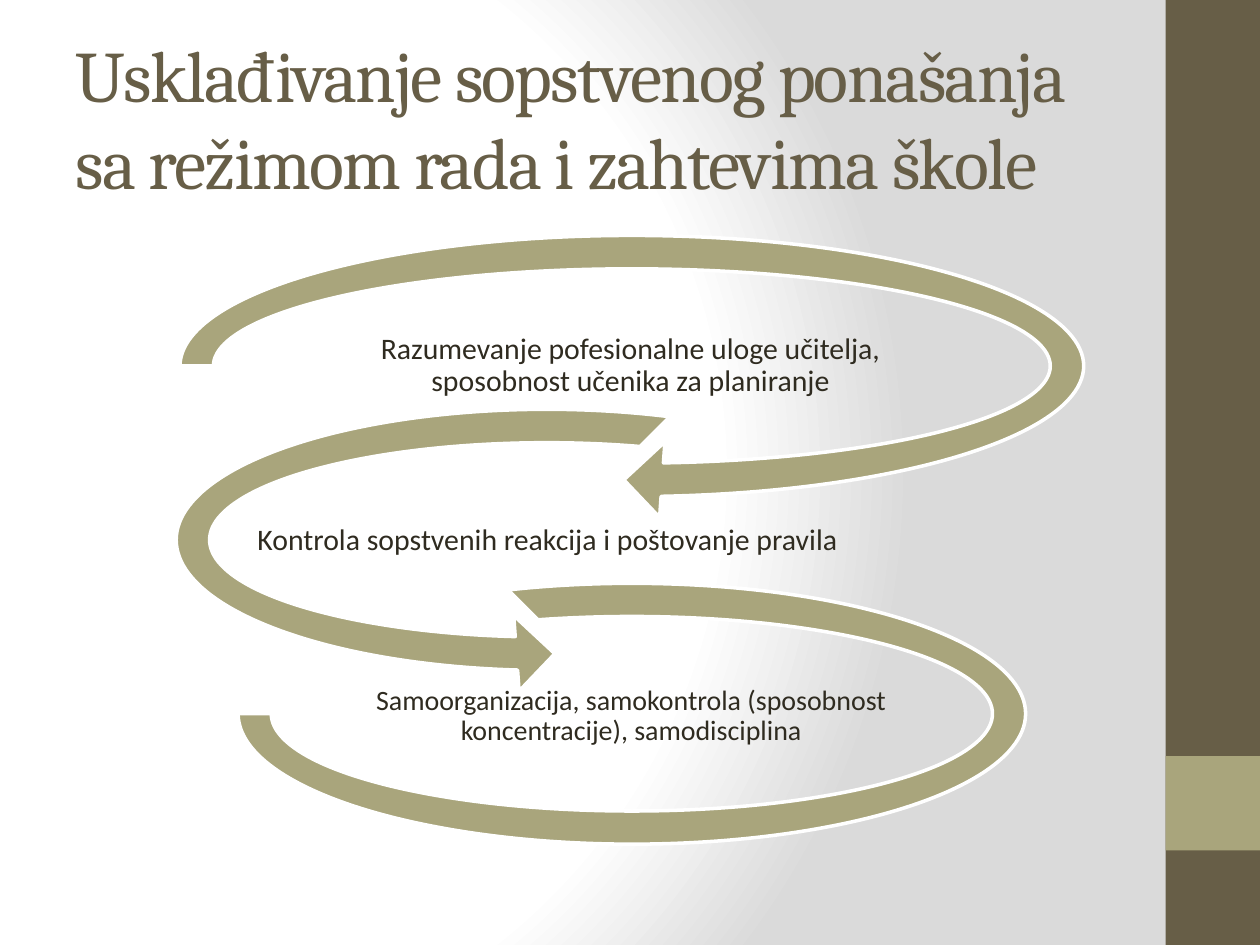
from pptx import Presentation
from pptx.dml.color import RGBColor
from pptx.enum.shapes import MSO_SHAPE
from pptx.enum.text import MSO_ANCHOR, MSO_AUTO_SIZE, PP_ALIGN
from pptx.oxml import parse_xml
from pptx.util import Inches, Pt

W, H = 10, 7.5
COLORS = {"brown": "675E47", "olive": "A9A57C", "ink": "2F2B20",
          "white": "FFFFFF", "gray": "DADADA"}
TITLE = "Usklađivanje sopstvenog ponašanja sa režimom rada i zahtevima škole"
# preset, box, adjustments, text, text box, text size
LOOPS = [
    (MSO_SHAPE.CIRCULAR_ARROW, (1.26, 1.7, 7.51, 2.41),
     (0.11, 11.42, 45, 108, 0.125),
     "Razumevanje pofesionalne uloge učitelja, sposobnost učenika za planiranje",
     (2.46, 2.57, 5.09, 0.67), 17),
    (MSO_SHAPE.LEFT_CIRCULAR_ARROW, (1.23, 3.08, 6.22, 2.41),
     (0.11, 11.42, 63, 189, 0.125),
     "Kontrola sopstvenih reakcija i poštovanje pravila",
     (1.54, 3.96, 5.61, 0.67), 17),
    (MSO_SHAPE.BLOCK_ARC, (1.89, 4.63, 6.25, 2.07),
     (135, 108, 0.127),
     "Samoorganizacija, samokontrola (sposobnost koncentracije), samodisciplina",
     (2.58, 5.35, 4.86, 0.67), 16),
]


def rgb(name):
    return RGBColor.from_string(COLORS[name])


def inches(box):
    return [Inches(v) for v in box]


def add_filled(s, preset, box, color, adjustments=(), line=None):
    sp = s.shapes.add_shape(preset, *inches(box))
    sp.shadow.inherit = False
    sp.fill.solid()
    sp.fill.fore_color.rgb = rgb(color)
    for i, value in enumerate(adjustments):
        sp.adjustments[i] = value
    if line:
        sp.line.color.rgb = rgb(line)
        sp.line.width = Pt(2)
    else:
        sp.line.fill.background()


def write(sp, text, *, font, size, color, align, spacing=1.0, inset=None,
          tracking=None):
    tf = sp.text_frame
    tf.word_wrap = True
    tf.auto_size = MSO_AUTO_SIZE.NONE
    tf.vertical_anchor = MSO_ANCHOR.MIDDLE
    if inset is not None:
        tf.margin_left = tf.margin_right = Inches(inset)
        tf.margin_top = tf.margin_bottom = Inches(inset)
    p = tf.paragraphs[0]
    p.alignment = align
    p.line_spacing = spacing
    r = p.add_run()
    r.text = text
    r.font.name = font
    r.font.size = Pt(size)
    r.font.color.rgb = rgb(color)
    if tracking is not None:
        r.font._element.set("spc", str(int(tracking * 100)))


def set_background(s):
    """Radial gradient, white on the left and gray on the right."""
    s.background.fill.gradient()
    grad = next(s.element.iter("{*}gradFill"))
    stops = "".join(
        f'<a:gs pos="{pos * 1000}"><a:srgbClr val="{COLORS[c]}"/></a:gs>'
        for pos, c in ((0, "white"), (75, "white"), (100, "gray")))
    grad.getparent().replace(grad, parse_xml(
        '<a:gradFill xmlns:a="http://schemas.openxmlformats.org/drawingml/2006/main"'
        f' rotWithShape="1"><a:gsLst>{stops}</a:gsLst><a:path path="circle">'
        '<a:fillToRect l="20000" t="50000" r="100000" b="50000"/></a:path></a:gradFill>'))


def main():
    prs = Presentation()
    prs.slide_width, prs.slide_height = Inches(W), Inches(H)
    s = prs.slides.add_slide(prs.slide_layouts[5])
    set_background(s)

    band = 0.75
    add_filled(s, MSO_SHAPE.RECTANGLE, (W - band, 0, band, H), "brown")
    add_filled(s, MSO_SHAPE.RECTANGLE, (W - band, H * 0.8, band, band), "olive")

    title = s.shapes.title
    title.left, title.top, title.width, title.height = inches((0.5, 0.3, 8.33, 1.25))
    write(title, TITLE, font="Cambria", size=41.4, color="brown",
          align=PP_ALIGN.LEFT, tracking=-1)

    for preset, box, adjustments, text, text_box, size in LOOPS:
        add_filled(s, preset, box, "olive", adjustments, line="white")
        write(s.shapes.add_textbox(*inches(text_box)), text, font="Calibri",
              size=size, color="ink", align=PP_ALIGN.CENTER, spacing=0.9, inset=0.01)

    prs.save("out.pptx")


if __name__ == "__main__":
    main()
